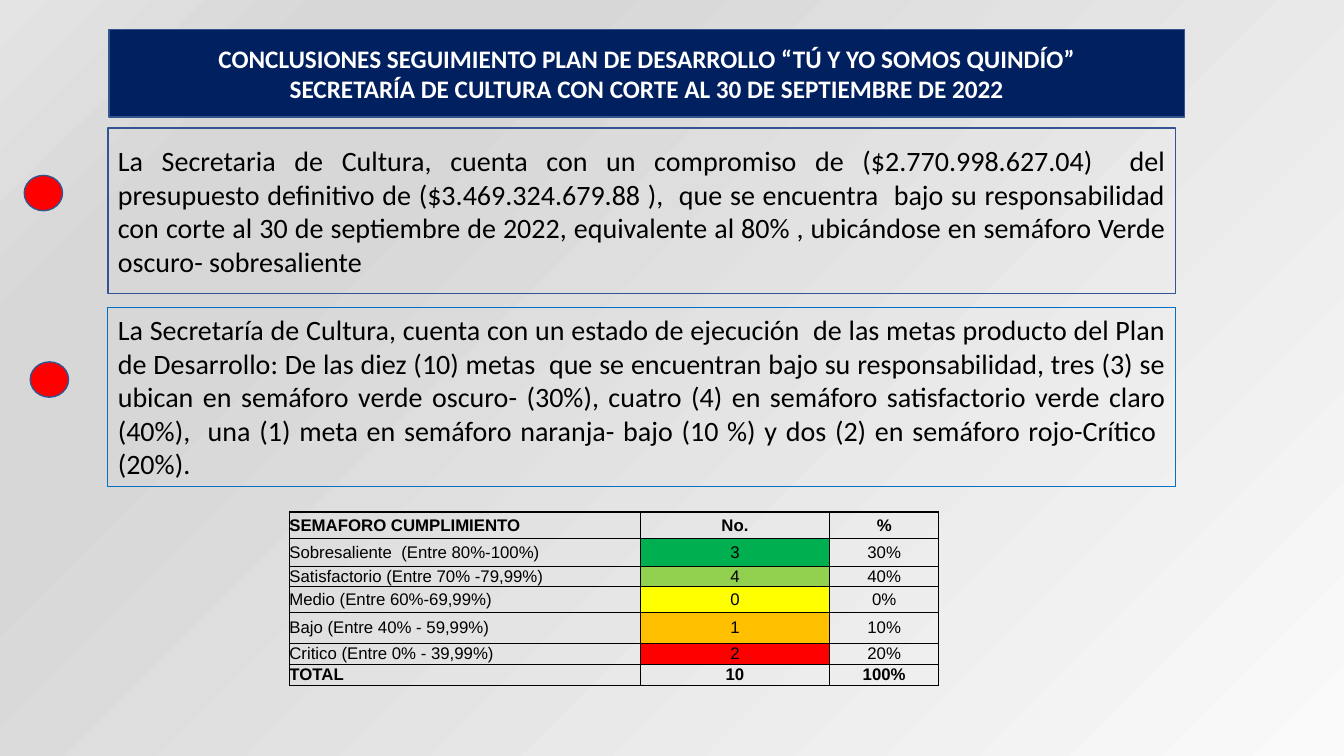
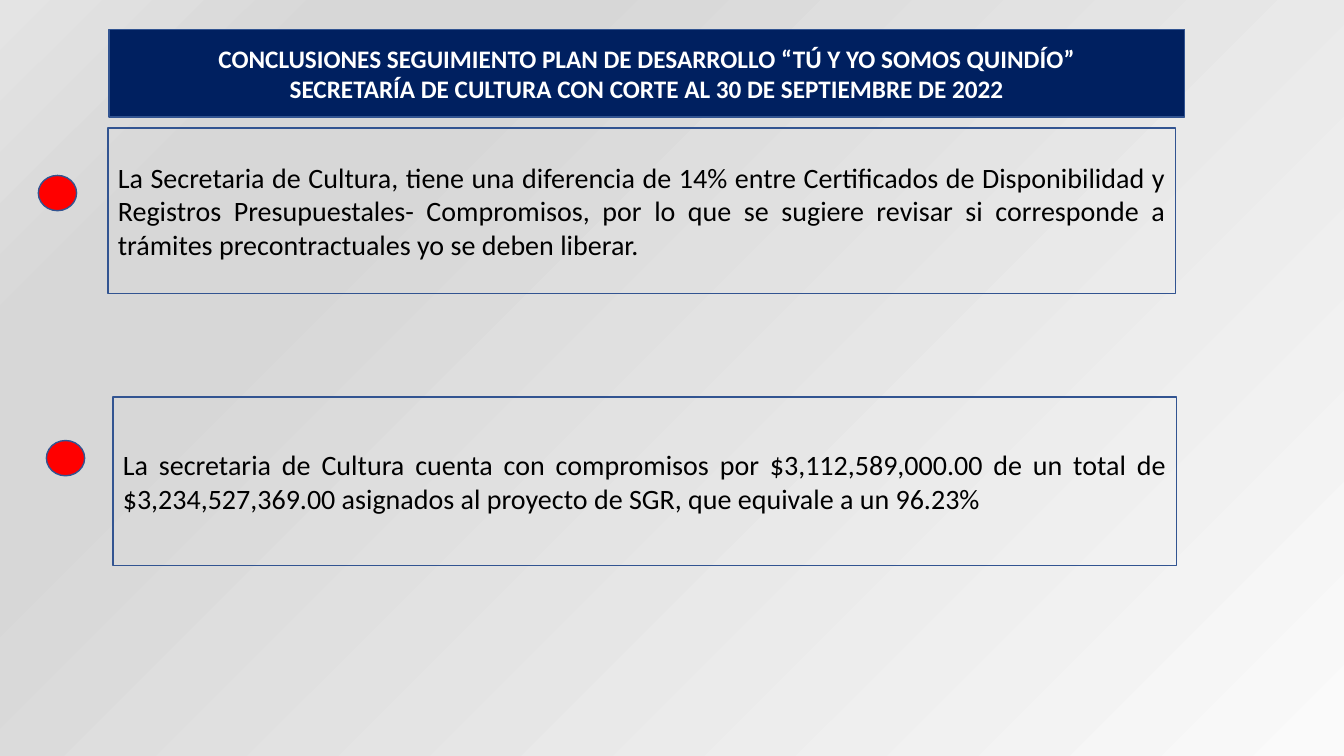
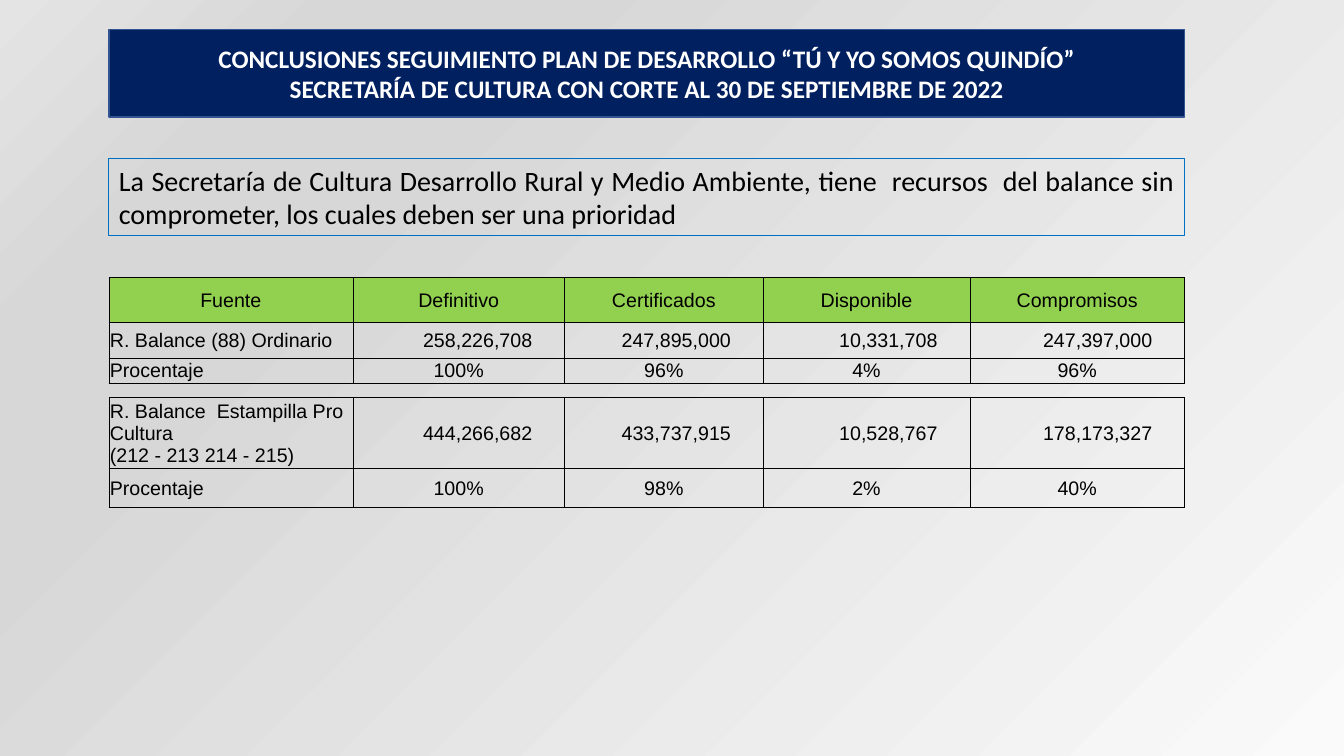
"""Builds three slides of conclusions on a development plan."""
from pptx import Presentation
from pptx.dml.color import RGBColor
from pptx.enum.shapes import MSO_SHAPE as SHAPE
from pptx.enum.text import MSO_ANCHOR as ANCHOR, MSO_AUTO_SIZE as AUTO, PP_ALIGN as ALIGN
from pptx.oxml import parse_xml
from pptx.oxml.ns import nsdecls
from pptx.util import Inches, Pt

BLACK = RGBColor(0x00, 0x00, 0x00)
WHITE = RGBColor(0xFF, 0xFF, 0xFF)
NAVY = RGBColor(0x00, 0x20, 0x60)
EDGE = RGBColor(0x32, 0x54, 0x91)
BLUE = RGBColor(0x00, 0x70, 0xC0)
RED = RGBColor(0xFF, 0x00, 0x00)
ORANGE = RGBColor(0xFF, 0xC0, 0x00)
YELLOW = RGBColor(0xFF, 0xFF, 0x00)
LIME = RGBColor(0x92, 0xD0, 0x50)
GREEN = RGBColor(0x00, 0xB0, 0x50)
BACKGROUND = [(0, "FAFAFA"), (74, "D7D7D7"), (83, "D7D7D7"), (100, "E4E4E4")]

TITLE = ["CONCLUSIONES SEGUIMIENTO PLAN DE DESARROLLO “TÚ Y YO SOMOS QUINDÍO”",
         "SECRETARÍA DE CULTURA CON CORTE AL 30 DE SEPTIEMBRE DE 2022"]
BUDGET = ("La Secretaria de Cultura, cuenta con un compromiso de ($2.770.998.627.04)  del "
          "presupuesto definitivo de ($3.469.324.679.88 ),  que se encuentra  bajo su "
          "responsabilidad con corte al 30 de septiembre de 2022, equivalente al 80% , "
          "ubicándose en semáforo Verde oscuro- sobresaliente")
GOALS = ("La Secretaría de Cultura, cuenta con un estado de ejecución  de las metas producto "
         "del Plan de Desarrollo: De las diez (10) metas  que se encuentran bajo su "
         "responsabilidad, tres (3) se ubican en semáforo verde oscuro- (30%), cuatro (4) en "
         "semáforo satisfactorio verde claro (40%),  una (1) meta en semáforo naranja- bajo "
         "(10 %) y dos (2) en semáforo rojo-Crítico  (20%).")
DIFFERENCE = ("La Secretaria de Cultura, tiene una diferencia de 14% entre Certificados de "
              "Disponibilidad y Registros Presupuestales- Compromisos, por lo que se sugiere "
              "revisar si corresponde a trámites precontractuales yo se deben liberar.")
ROYALTIES = ("La secretaria de Cultura cuenta con compromisos por $3,112,589,000.00 de un total "
             "de $3,234,527,369.00 asignados al proyecto de SGR, que equivale a un 96.23%")
BALANCE = ("La Secretaría de Cultura Desarrollo Rural y Medio Ambiente, tiene  recursos  del "
           "balance sin comprometer, los cuales deben ser una prioridad")

LIGHTS = [("SEMAFORO CUMPLIMIENTO", "No.", "%"),
          ("Sobresaliente  (Entre 80%-100%)", "3", "30%"),
          ("Satisfactorio (Entre 70% -79,99%)", "4", "40%"),
          ("Medio (Entre 60%-69,99%)", "0", "0%"),
          ("Bajo (Entre 40% - 59,99%)", "1", "10%"),
          ("Critico (Entre 0% - 39,99%)", "2", "20%"),
          ("TOTAL", "10", "100%")]
LIGHT_FILLS = [None, GREEN, LIME, YELLOW, ORANGE, RED, None]
ORDINARY = [("Fuente", "Definitivo", "Certificados", "Disponible", "Compromisos"),
            ("R. Balance (88) Ordinario", "258,226,708", "247,895,000", "10,331,708",
             "247,397,000"),
            ("Procentaje", "100%", "96%", "4%", "96%")]
STAMP = [("R. Balance  Estampilla Pro Cultura\v(212 - 213 214 - 215)", "444,266,682",
          "433,737,915", "10,528,767", "178,173,327"),
         ("Procentaje", "100%", "98%", "2%", "40%")]
FUND_COLS = [2.42, 2.1, 1.97, 2.05, 2.13]

SLIDES = [
    {"boxes": [(BUDGET, (1.07, 1.27, 10.59, 1.64), False),
               (GOALS, (1.07, 3.05, 10.59, 1.78), True)],
     "dots": [(0.24, 1.74), (0.3, 3.59)],
     "tables": [{"rows": LIGHTS, "at": (2.87, 5.08), "cols": [3.48, 1.88, 1.08],
                 "heights": [0.26, 0.28, 0.2, 0.25, 0.31, 0.21, 0.21], "size": 12,
                 "outer": 1, "bold_rows": (0, 6), "inset": 0,
                 "fills": {(i, 1): c for i, c in enumerate(LIGHT_FILLS) if c}}]},
    {"boxes": [(DIFFERENCE, (1.07, 1.27, 10.59, 1.64), False),
               (ROYALTIES, (1.12, 3.94, 10.55, 1.67), False)],
     "dots": [(0.38, 1.74), (0.46, 4.37)],
     "tables": []},
    {"boxes": [(BALANCE, (1.08, 1.57, 10.67, 0.77), True)],
     "dots": [],
     "tables": [{"rows": ORDINARY, "at": (1.08, 2.75), "cols": FUND_COLS,
                 "heights": [0.45, 0.35, 0.25], "centred": (0,),
                 "fills": {(0, j): LIME for j in range(len(FUND_COLS))}},
                {"rows": STAMP, "at": (1.08, 3.94), "cols": FUND_COLS,
                 "heights": [0.71, 0.38]}]},
]


def write(tf, text, size=20, font="Calibri", color=BLACK, bold=False, align=ALIGN.JUSTIFY):
    lines = [text] if isinstance(text, str) else text
    for i, line in enumerate(lines):
        p = tf.paragraphs[0] if i == 0 else tf.add_paragraph()
        p.text = line
        p.alignment = align
        for r in p.runs:
            r.font.name, r.font.size, r.font.bold = font, Pt(size), bold
            r.font.color.rgb = color


def add_box(s, at, kind=SHAPE.RECTANGLE, fill=None, line=EDGE, width=1):
    sp = s.shapes.add_shape(kind, *map(Inches, at))
    sp.shadow.inherit = False
    if fill is None:
        sp.fill.background()
    else:
        sp.fill.solid()
        sp.fill.fore_color.rgb = fill
    sp.line.color.rgb = line
    sp.line.width = Pt(width)
    return sp


def add_borders(cell, widths):
    tc_pr = cell._tc.get_or_add_tcPr()
    for side, width in zip("LRTB", widths):
        tc_pr.append(parse_xml(
            f'<a:ln{side} {nsdecls("a")} w="{Pt(width)}"><a:solidFill>'
            f'<a:srgbClr val="{BLACK}"/></a:solidFill></a:ln{side}>'))


def add_grid(s, rows, at, cols, heights, size=14, outer=0.5, inset=0.01,
             bold_rows=(), centred=(), fills=None):
    fills = fills or {}
    box = (*at, sum(cols), sum(heights))
    table = s.shapes.add_table(len(rows), len(cols), *map(Inches, box)).table
    table.first_row = table.horz_banding = False
    for col, width in zip(table.columns, cols):
        col.width = Inches(width)
    for row, height in zip(table.rows, heights):
        row.height = Inches(height)
    for i, row in enumerate(rows):
        for j, text in enumerate(row):
            cell = table.cell(i, j)
            amount = "," in text and j > 0
            cell.margin_left = cell.margin_top = Inches(inset)
            cell.margin_right = Inches(0.32 if amount else inset)
            cell.margin_bottom = 0
            cell.vertical_anchor = ANCHOR.MIDDLE
            if amount:
                align = ALIGN.RIGHT
            else:
                align = ALIGN.CENTER if j or i in centred else ALIGN.LEFT
            write(cell.text_frame, text, size=size, font="Arial", bold=i in bold_rows,
                  align=align)
            edges = (j == 0, j == len(cols) - 1, i == 0, i == len(rows) - 1)
            add_borders(cell, [outer if edge else 0.5 for edge in edges])
            if (i, j) in fills:
                cell.fill.solid()
                cell.fill.fore_color.rgb = fills[i, j]
            else:
                cell.fill.background()


def set_background(master):
    c_sld = master.background._cSld
    if c_sld.bg is not None:
        c_sld.remove(c_sld.bg)
    stops = "".join(f'<a:gs pos="{pos * 1000}"><a:srgbClr val="{color}"/></a:gs>'
                    for pos, color in BACKGROUND)
    c_sld.insert(0, parse_xml(
        f'<p:bg {nsdecls("p", "a")}><p:bgPr><a:gradFill rotWithShape="1"><a:gsLst>{stops}'
        '</a:gsLst><a:path path="circle"><a:fillToRect l="100000" t="100000"/></a:path>'
        '<a:tileRect r="-100000" b="-100000"/></a:gradFill><a:effectLst/></p:bgPr></p:bg>'))


def add_slide(prs, boxes, dots, tables):
    s = prs.slides.add_slide(prs.slide_layouts[6])
    title = add_box(s, (1.08, 0.29, 10.67, 0.87), fill=NAVY)
    write(title.text_frame, TITLE, size=18, color=WHITE, bold=True, align=ALIGN.CENTER)
    for text, at, fitted in boxes:
        sp = add_box(s, at, line=BLUE if fitted else EDGE, width=0.75 if fitted else 1)
        tf = sp.text_frame
        tf.word_wrap = True
        tf.vertical_anchor = ANCHOR.TOP if fitted else ANCHOR.MIDDLE
        tf.auto_size = AUTO.SHAPE_TO_FIT_TEXT if fitted else AUTO.NONE
        write(tf, text)
    for dot in dots:
        add_box(s, (*dot, 0.38, 0.35), kind=SHAPE.OVAL, fill=RED)
    for grid in tables:
        add_grid(s, **grid)


def main():
    prs = Presentation()
    prs.slide_width, prs.slide_height = Inches(13.33), Inches(7.5)
    set_background(prs.slide_master)
    for content in SLIDES:
        add_slide(prs, **content)
    prs.save("out.pptx")


if __name__ == "__main__":
    main()
